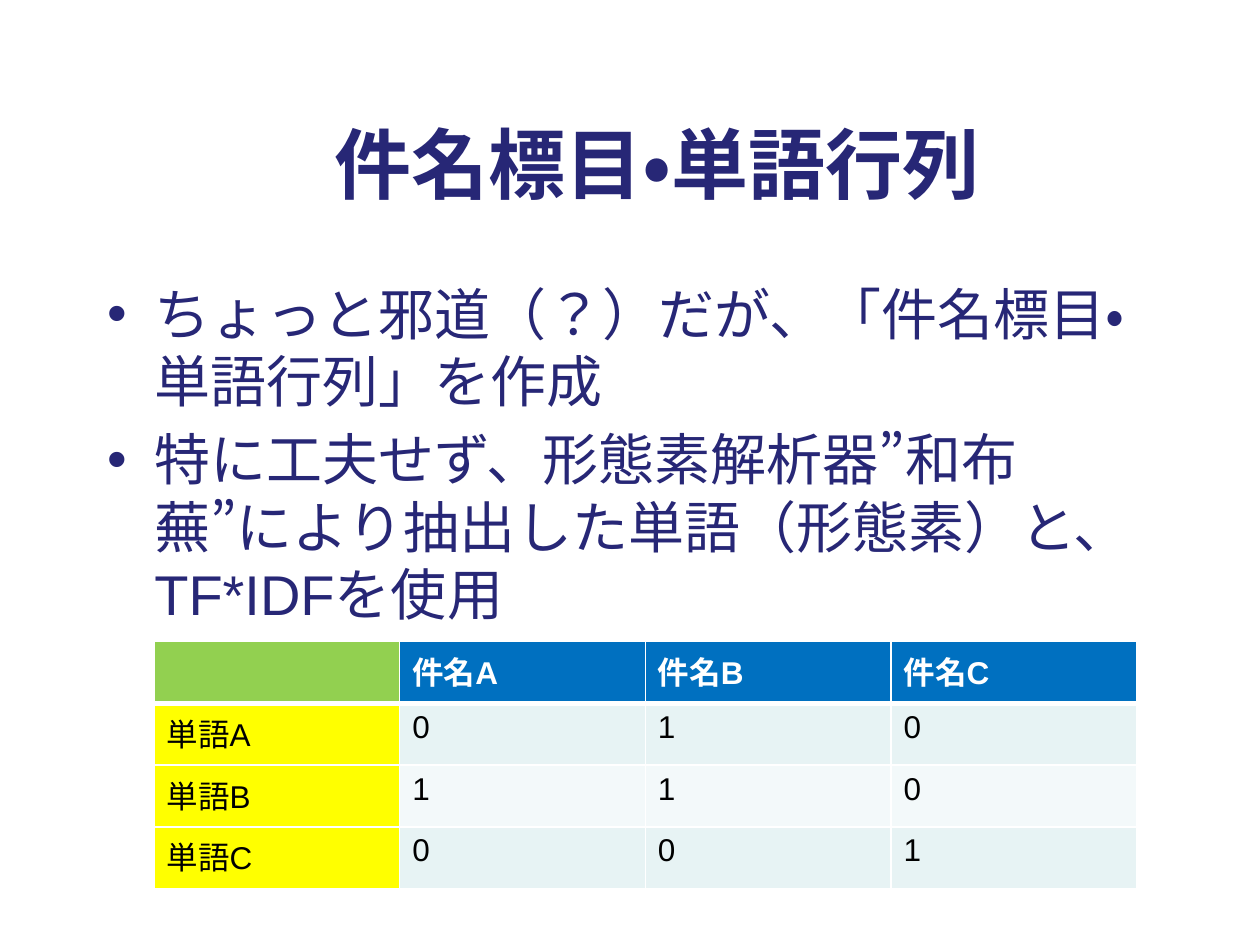
"""Builds a slide on a subject-heading by word matrix, with its sample table."""
from lxml import etree
from pptx import Presentation
from pptx import util as u
from pptx.dml.color import RGBColor
from pptx.enum import lang, text
from pptx.oxml.ns import qn

NAVY = RGBColor(0x27, 0x27, 0x76)
WHITE = RGBColor(0xFF, 0xFF, 0xFF)
BLACK = RGBColor(0, 0, 0)
GREEN = RGBColor(0x92, 0xD0, 0x50)
BLUE = RGBColor(0, 0x70, 0xC0)
YELLOW = RGBColor(0xFF, 0xFF, 0)
BANDS = (RGBColor(0xE7, 0xF3, 0xF4), RGBColor(0xF3, 0xF9, 0xFA))

BULLETS = [
    "ちょっと邪道（？）だが、「件名標目・単語行列」を作成",
    "特に工夫せず、形態素解析器”和布蕪”により抽出した単語（形態素）と、TF*IDFを使用",
]
MATRIX = [
    ["", "件名A", "件名B", "件名C"],
    ["単語A", "0", "1", "0"],
    ["単語B", "1", "1", "0"],
    ["単語C", "0", "0", "1"],
]


class Deck:
    def __init__(self, prs):
        self.s = prs.slides.add_slide(prs.slide_layouts[1])
        self.base = {"name": "Arial", "language_id": lang.MSO_LANGUAGE_ID.JAPANESE}

    def add_words(self, p, words, color, **style):
        r = p.add_run()
        r.text = words
        for name, value in {**self.base, **style}.items():
            setattr(r.font, name, value)
        r.font.color.rgb = color

    def place(self, sp, box, anchor):
        for name, value in zip(("left", "top", "width", "height"), box):
            setattr(sp, name, u.Pt(value))
        tf = sp.text_frame
        fmt = {"word_wrap": True, "auto_size": text.MSO_AUTO_SIZE.NONE,
               "vertical_anchor": anchor}
        for name, value in fmt.items():
            setattr(tf, name, value)
        return tf

    def title(self, words, box):
        tf = self.place(self.s.shapes.title, box, text.MSO_ANCHOR.MIDDLE)
        p = tf.paragraphs[0]
        p.alignment = text.PP_ALIGN.CENTER
        self.add_words(p, words, NAVY, size=u.Pt(44), bold=True)

    def bullets(self, items, box):
        tf = self.place(self.s.placeholders[1], box, text.MSO_ANCHOR.TOP)
        for i, item in enumerate(items):
            p = tf.add_paragraph() if i else tf.paragraphs[0]
            p.space_before = u.Pt(6.4 if i else 0)
            self.add_words(p, item, NAVY, size=u.Pt(32))

    def border(self, cell, side, width):
        tc_pr = cell._tc.get_or_add_tcPr()
        ln = etree.SubElement(tc_pr, qn(f"a:ln{side}"), w=str(u.Pt(width)))
        fill = etree.SubElement(ln, qn("a:solidFill"))
        etree.SubElement(fill, qn("a:srgbClr"), val=str(WHITE))

    def table(self, rows, box):
        shape = self.s.shapes.add_table(len(rows), len(rows[0]), *map(u.Pt, box))
        tbl = shape.table
        for i, row in enumerate(rows):
            for j, words in enumerate(row):
                cell = tbl.cell(i, j)
                thick = {0: "B", 1: "T"}.get(i)
                for side in "LRTB":
                    self.border(cell, side, 3 if side == thick else 1)
                cell.fill.solid()
                if i == 0:
                    color = BLUE if j else GREEN
                else:
                    color = BANDS[(i - 1) % 2] if j else YELLOW
                cell.fill.fore_color.rgb = color
                if words:
                    self.add_words(cell.text_frame.paragraphs[0], words,
                                   BLACK if i else WHITE, size=u.Pt(18), bold=i == 0)


def main():
    prs = Presentation()
    prs.slide_width, prs.slide_height = u.Pt(720), u.Pt(540)
    deck = Deck(prs)
    deck.title("件名標目・単語行列", (31, 48, 689, 90))
    deck.bullets(BULLETS, (54, 156, 612, 318))
    deck.table(MATRIX, (88, 366.5, 561.6, 141.6))
    prs.save("out.pptx")


if __name__ == "__main__":
    main()
